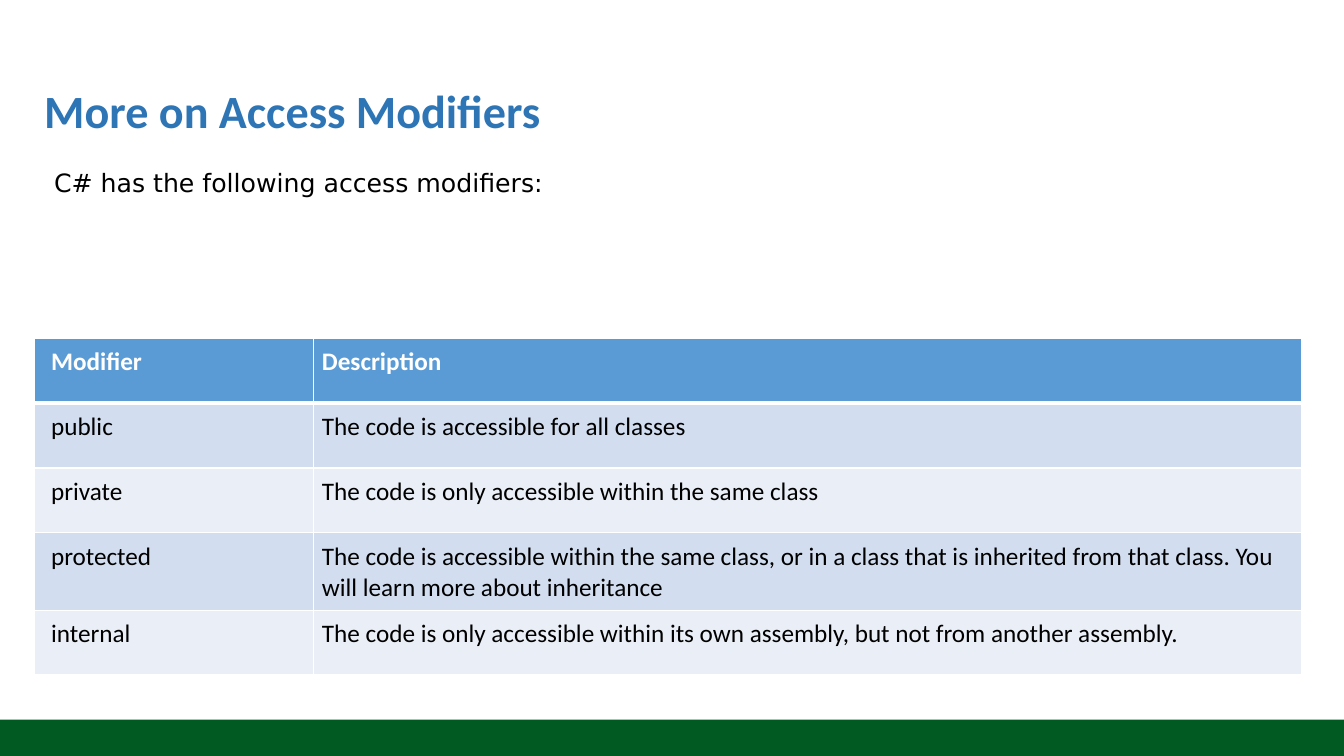
from lxml import etree
from pptx import Presentation
from pptx.dml.color import RGBColor
from pptx.enum import shapes, text
from pptx.oxml import ns
from pptx.util import Pt

ROWS = [
    ("Modifier", "Description"),
    ("public", "The code is accessible for all classes"),
    ("private", "The code is only accessible within the same class"),
    ("protected", "The code is accessible within the same class, or in a class "
                  "that is inherited from that class. You will learn more about inheritance"),
    ("internal", "The code is only accessible within its own assembly, "
                 "but not from another assembly."),
]


def rgb(value):
    """Return a colour from a hex string."""
    return RGBColor.from_string(value)


def style(p, font, size, color, bold=False):
    """Format the runs of a paragraph."""
    for r in p.runs:
        r.font.name, r.font.size, r.font.bold = font, Pt(size), bold
        r.font.color.rgb = rgb(color)


def add_text(s, box, content, font, size, color, bold=False,
             anchor=text.MSO_ANCHOR.TOP):
    """Add a wrapped text box with one formatted paragraph."""
    tf = s.shapes.add_textbox(*map(Pt, box)).text_frame
    tf.word_wrap = True
    tf.vertical_anchor = anchor
    tf.text = content
    style(tf.paragraphs[0], font, size, color, bold)
    return tf


def add_bar(s, box, color):
    """Add a plain filled rectangle."""
    sp = s.shapes.add_shape(shapes.MSO_SHAPE.RECTANGLE, *map(Pt, box))
    sp.shadow.inherit = False
    sp.fill.solid()
    sp.fill.fore_color.rgb = rgb(color)
    sp.line.fill.background()


def set_border(cell, side, width, color):
    """Insert one cell border ahead of the cell fill."""
    pr = cell._tc.get_or_add_tcPr()
    ln = etree.Element(ns.qn("a:ln" + side), w=str(Pt(width)))
    fill = etree.SubElement(ln, ns.qn("a:solidFill"))
    etree.SubElement(fill, ns.qn("a:srgbClr"), val=color)
    pr.insert("LRTB".index(side), ln)


def fill_cell(cell, content, row, col):
    """Write and format one table cell."""
    header = row == 0
    cell.text = content
    cell.margin_left = Pt(12 if col == 0 else 6)
    cell.margin_right = cell.margin_top = cell.margin_bottom = Pt(6)
    style(cell.text_frame.paragraphs[0], "Calibri", 18,
          "FFFFFF" if header else "000000", header)
    cell.fill.solid()
    cell.fill.fore_color.rgb = rgb(
        "5B9BD5" if header else ("EAEFF7", "D2DEEF")[row % 2])
    for side in "LRTB":
        thick = (header and side == "B") or (row == 1 and side == "T")
        set_border(cell, side, 3 if thick else 1, "FFFFFF")


def add_modifier_table(s, left, top, widths, row_height):
    """Add the table of access modifiers."""
    frame = s.shapes.add_table(len(ROWS), len(widths), Pt(left), Pt(top),
                               Pt(sum(widths)), Pt(row_height * len(ROWS)))
    table = frame.table
    for column, width in zip(table.columns, widths):
        column.width = Pt(width)
    for i, values in enumerate(ROWS):
        table.rows[i].height = Pt(row_height)
        for j, content in enumerate(values):
            fill_cell(table.cell(i, j), content, i, j)


def main():
    """Build and save the slide."""
    prs = Presentation()
    prs.slide_width, prs.slide_height = Pt(960), Pt(540)
    s = prs.slides.add_slide(prs.slide_layouts[6])
    add_bar(s, (0, 514, 960, 26), "015A22")
    title = add_text(s, (24.5, 29, 913, 104.5), "More on Access Modifiers",
                     "Calibri", 33, "2E75B6", True, text.MSO_ANCHOR.MIDDLE)
    title.paragraphs[0].line_spacing = 0.9
    add_modifier_table(s, 24.5, 241.5, (199.5, 705.5), 46.4)
    add_text(s, (31.5, 116, 898.5, 51), "C# has the following access modifiers:",
             "DejaVu Sans", 18, "000000")
    prs.save("out.pptx")


if __name__ == "__main__":
    main()
